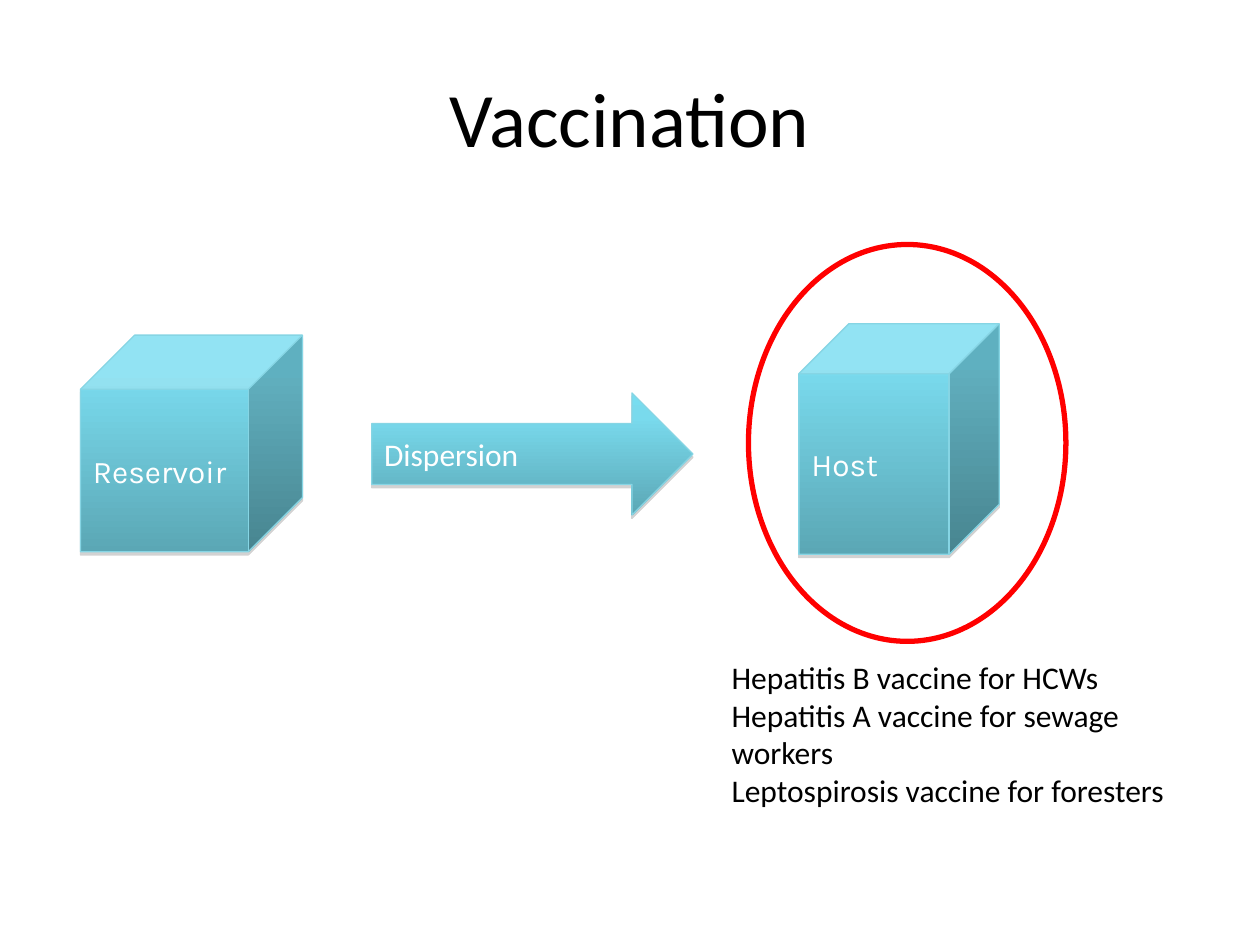
from pptx import Presentation
from pptx.dml.color import RGBColor
from pptx.enum.shapes import MSO_SHAPE as Kind
from pptx.enum.text import MSO_ANCHOR as Anchor, PP_ALIGN as Align
from pptx.oxml import parse_xml
from pptx.oxml.ns import nsdecls, qn
from pptx.util import Pt

BLACK = RGBColor(0, 0, 0)
WHITE = RGBColor(255, 255, 255)
RED = RGBColor(255, 0, 0)
EDGE = RGBColor(0x86, 0xD5, 0xE4)
SHADE = RGBColor(0x80, 0x80, 0x80)
STOPS = (
    (0, RGBColor(0x77, 0xDD, 0xF0)),
    (20, RGBColor(0x79, 0xDA, 0xED)),
    (100, RGBColor(0x5B, 0xA7, 0xB5)),
)


def write(frame, text, font="Calibri", size=18, color=BLACK,
          align=Align.LEFT, anchor=Anchor.TOP):
    frame.word_wrap = True
    frame.vertical_anchor = anchor
    frame.text = text
    for para in frame.paragraphs:
        para.alignment = align
        para.font.name = font
        para.font.size = Pt(size)
        para.font.color.rgb = color


class Deck:
    def __init__(self, width, height):
        self.file = Presentation()
        self.file.slide_width = Pt(width)
        self.file.slide_height = Pt(height)
        self.slide = self.file.slides.add_slide(self.file.slide_layouts[6])

    def text(self, box, text, **style):
        shape = self.slide.shapes.add_textbox(*map(Pt, box))
        write(shape.text_frame, text, **style)

    def shape(self, kind, box, line, width):
        shape = self.slide.shapes.add_shape(kind, *map(Pt, box))
        shape.shadow.inherit = False
        shape.line.color.rgb = line
        shape.line.width = Pt(width)
        return shape

    def ring(self, box):
        self.shape(Kind.OVAL, box, RED, 3).fill.background()

    def block(self, kind, box, text, font):
        shape = self.shape(kind, box, EDGE, 0.75)
        shape.fill.gradient()
        shape.fill.gradient_angle = 270
        props = shape._element.spPr
        stops = props.find(".//" + qn("a:gsLst"))
        for stop in list(stops):
            stops.remove(stop)
        for place, color in STOPS:
            stops.append(parse_xml(
                f'<a:gs {nsdecls("a")} pos="{place * 1000}">'
                f'<a:srgbClr val="{color}"/></a:gs>'))
        props.find(qn("a:effectLst")).append(parse_xml(
            f'<a:outerShdw {nsdecls("a")} blurRad="0" dist="{Pt(1.8)}" '
            f'dir="5400000" rotWithShape="0"><a:srgbClr val="{SHADE}">'
            '<a:alpha val="35000"/></a:srgbClr></a:outerShdw>'))
        write(shape.text_frame, text, font=font, color=WHITE,
              anchor=Anchor.MIDDLE)

    def save(self):
        self.file.save("out.pptx")


def main():
    deck = Deck(720, 540)
    deck.text((36, 21.6, 648, 90), "Vaccination", size=44,
              align=Align.CENTER, anchor=Anchor.MIDDLE)
    deck.text((411, 372.4, 266.4, 160),
              "Hepatitis B vaccine for HCWs\n"
              "Hepatitis A vaccine for sewage workers\n"
              "Leptospirosis vaccine for foresters")
    deck.ring((427.7, 139.7, 181.4, 226.8))
    deck.block(Kind.CUBE, (46, 191.5, 126.8, 123.8), "Reservoir", "Karla")
    deck.block(Kind.CUBE, (456.5, 185, 114.5, 131.8), "Host", "Karla")
    deck.block(Kind.RIGHT_ARROW, (212.4, 224.6, 183.6, 69.8),
               "Dispersion", "Calibri")
    deck.save()


if __name__ == "__main__":
    main()
